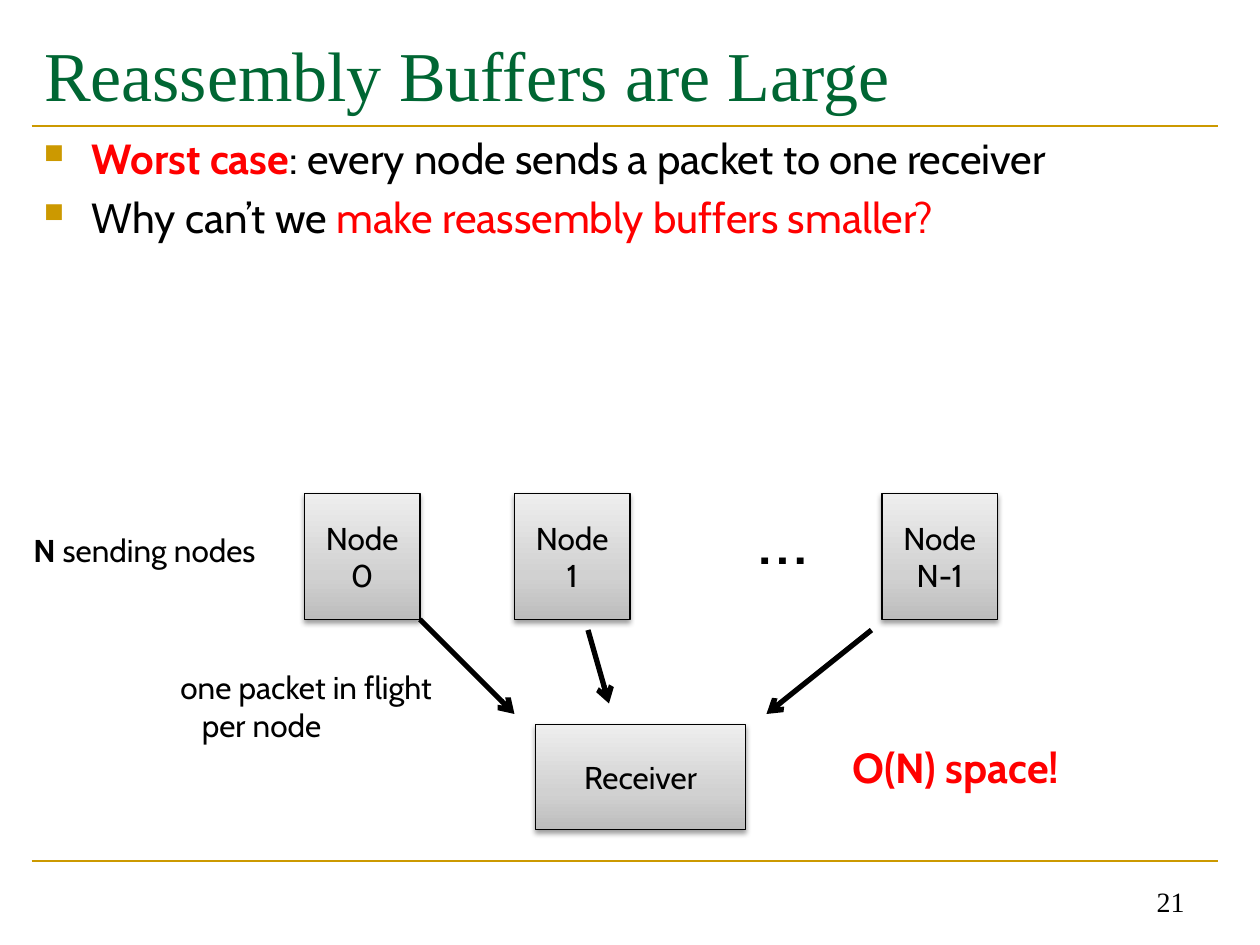
from dataclasses import dataclass

from lxml.etree import SubElement
from pptx import Presentation
from pptx.dml.color import RGBColor
from pptx.enum.shapes import MSO_CONNECTOR, MSO_SHAPE
from pptx.enum.text import MSO_ANCHOR, MSO_AUTO_SIZE, PP_ALIGN
from pptx.oxml import parse_xml
from pptx.oxml.ns import nsdecls, qn
from pptx.util import Inches, Pt


@dataclass(frozen=True)
class Theme:
    title_font: str = "Times New Roman"
    body_font: str = "Cabin"
    green: str = "006633"
    gold: str = "CC9900"
    red: str = "FF0000"
    black: str = "000000"
    gradient: tuple = ((0, "BDBDBD"), (35, "D1D1D1"), (100, "EEEEEE"))
    title_size: int = 40
    ellipsis_size: int = 43
    body_size: int = 24
    label_size: int = 18
    number_size: int = 16


THEME = Theme()
CELL = 1 / 12
COLUMNS, ROWS = 120, 90

TITLE = "Reassembly Buffers are Large"
BULLETS = [
    [("Worst case", THEME.red, True), (": every node sends a packet to one receiver", THEME.black, False)],
    [("Why can’t we ", THEME.black, False), ("make reassembly buffers smaller?", THEME.red, False)],
]
NODES = [("Node 0", 29), ("Node 1", 49), ("Node N-1", 84)]
NODE_TOP, NODE_WIDTH, NODE_HEIGHT = 47, 11, 12
RECEIVER = ("Receiver", (51, 69, 20, 10))
ARROWS = [((40, 59), (49, 68)), ((56, 60), (58, 67)), ((83, 60), (73, 68))]
RULE_ROWS = [82, 12]
RULE_LEFT, RULE_RIGHT = 3, 116
PAGE_NUMBER = "21"


def grid(*cells):
    return [Inches(cell * CELL) for cell in cells]


def style(font, size, color=THEME.black, name=THEME.body_font, bold=False):
    font.size, font.name, font.bold = Pt(size), name, bold
    font.color.rgb = RGBColor.from_string(color)


def add_line(page, start, end, color, width, arrow=False):
    line = page.shapes.add_connector(MSO_CONNECTOR.STRAIGHT, *grid(*start, *end))
    line.line.color.rgb = RGBColor.from_string(color)
    line.line.width = Pt(width)
    properties = line._element.spPr
    if arrow:
        SubElement(properties.find(qn("a:ln")), qn("a:tailEnd"), type="arrow")
    SubElement(properties, qn("a:effectLst"))


def add_block(page, text, cells):
    block = page.shapes.add_shape(MSO_SHAPE.RECTANGLE, *grid(*cells))
    stops = "".join(
        f'<a:gs pos="{share * 1000}"><a:srgbClr val="{color}"/></a:gs>' for share, color in THEME.gradient
    )
    properties = block._element.spPr
    properties.append(parse_xml(
        f'<a:gradFill {nsdecls("a")} rotWithShape="1"><a:gsLst>{stops}</a:gsLst>'
        '<a:lin ang="16200000" scaled="0"/></a:gradFill>'
    ))
    block.line.color.rgb = RGBColor.from_string(THEME.black)
    block.line.width = Pt(0.75)
    properties.append(parse_xml(
        f'<a:effectLst {nsdecls("a")}><a:outerShdw blurRad="{Pt(3.1)}" dist="{Pt(1.6)}" dir="5400000"'
        f' rotWithShape="0"><a:srgbClr val="{THEME.black}"><a:alpha val="38000"/></a:srgbClr>'
        "</a:outerShdw></a:effectLst>"
    ))
    frame = block.text_frame
    frame.word_wrap = True
    frame.vertical_anchor = MSO_ANCHOR.MIDDLE
    para = frame.paragraphs[0]
    para.text, para.alignment = text, PP_ALIGN.CENTER
    style(para.font, THEME.label_size)


def add_text(page, lines, cells, size, color=THEME.black, name=THEME.body_font, wrap=False):
    box = page.shapes.add_textbox(*grid(*cells))
    frame = box.text_frame
    frame.word_wrap = wrap
    frame.auto_size = MSO_AUTO_SIZE.NONE if wrap else MSO_AUTO_SIZE.SHAPE_TO_FIT_TEXT
    for index, text in enumerate(lines):
        para = frame.add_paragraph() if index else frame.paragraphs[0]
        para.text = text
        style(para.font, size, color, name)
    return frame


def add_bullets(page):
    frame = page.shapes.add_textbox(*grid(RULE_LEFT, 12, RULE_RIGHT - RULE_LEFT, 34)).text_frame
    frame.word_wrap = True
    for index, spans in enumerate(BULLETS):
        para = frame.add_paragraph() if index else frame.paragraphs[0]
        properties = para._p.get_or_add_pPr()
        properties.set("marL", str(Inches(0.38)))
        properties.set("indent", str(Inches(-0.38)))
        if index:
            para.space_before = Pt(4.8)
        color = SubElement(properties, qn("a:buClr"))
        SubElement(color, qn("a:srgbClr"), val=THEME.gold)
        SubElement(properties, qn("a:buSzPct"), val="65000")
        SubElement(properties, qn("a:buChar"), char="■")
        for text, color, bold in spans:
            span = para.add_run()
            span.text = text
            style(span.font, THEME.body_size, color, bold=bold)


def main():
    deck = Presentation()
    deck.slide_width, deck.slide_height = grid(COLUMNS, ROWS)
    page = deck.slides.add_slide(deck.slide_layouts[5])

    for row in RULE_ROWS:
        add_line(page, (RULE_LEFT, row), (RULE_RIGHT, row), THEME.gold, 1.5)

    title = page.shapes.title
    title.left, title.top, title.width, title.height = grid(RULE_LEFT, 2, RULE_RIGHT - RULE_LEFT, 10)
    title.text_frame.text = TITLE
    title.text_frame.vertical_anchor = MSO_ANCHOR.MIDDLE
    para = title.text_frame.paragraphs[0]
    para.alignment = PP_ALIGN.LEFT
    style(para.font, THEME.title_size, THEME.green, THEME.title_font)

    add_bullets(page)

    number = add_text(page, [PAGE_NUMBER], (86, 82, 28, 6), THEME.number_size, name=THEME.title_font, wrap=True)
    number.vertical_anchor = MSO_ANCHOR.BOTTOM
    number.paragraphs[0].alignment = PP_ALIGN.RIGHT

    for text, left in NODES:
        add_block(page, text, (left, NODE_TOP, NODE_WIDTH, NODE_HEIGHT))
    add_block(page, *RECEIVER)
    for start, end in ARROWS:
        add_line(page, start, end, THEME.black, 3, arrow=True)

    packet = add_text(page, ["one packet in flight", "per node"], (16, 63, 28, 8.5), THEME.label_size)
    packet.paragraphs[1]._p.get_or_add_pPr().set("marL", str(Inches(0.17)))

    senders = add_text(page, ["N"], (2, 50, 25, 4.8), THEME.label_size)
    senders.paragraphs[0].runs[0].font.bold = True
    senders.paragraphs[0].add_run().text = " sending nodes"

    add_text(page, ["…"], (71, 46, 8.3, 9.8), THEME.ellipsis_size)
    space = add_text(page, ["O(N) space!"], (80, 70, 32, 6), THEME.body_size, THEME.red, wrap=True)
    space.paragraphs[0].font.bold = True

    deck.save("out.pptx")


if __name__ == "__main__":
    main()
